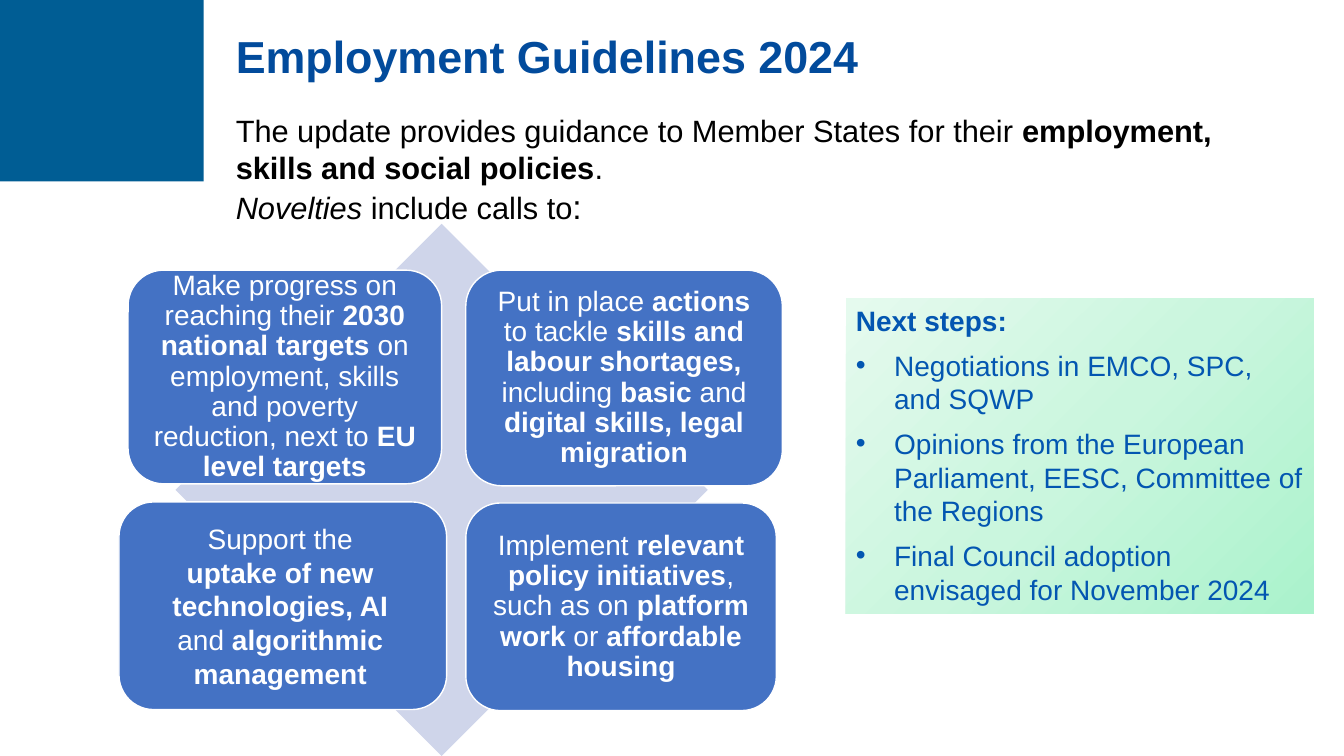
import lxml.etree
import pptx
import pptx.dml.color
import pptx.enum.shapes
import pptx.enum.text
import pptx.oxml
import pptx.util

Inches = pptx.util.Inches
Pt = pptx.util.Pt
SHAPES = pptx.enum.shapes.MSO_SHAPE
ALIGN = pptx.enum.text.PP_ALIGN
ANCHOR = pptx.enum.text.MSO_ANCHOR
DRAWING = "http://schemas.openxmlformats.org/drawingml/2006/main"

# Text between ** marks is bold.
TITLE = "Employment Guidelines 2024"
INTRO = ["The update provides guidance to Member States for their "
         "**employment, skills and social policies**.",
         "Novelties include calls to:"]
# box, insets (left, right), line spacing, text
NOVELTIES = [
    ((1.27, 2.68, 3.11, 2.12), (0.08, 0.08), 0.9,
     "Make progress on reaching their **2030 national targets **on employment, "
     "skills and poverty reduction, next to **EU level targets**"),
    ((4.62, 2.68, 3.14, 2.14), (0.08, 0.08), 0.9,
     "Put in place **actions **to tackle **skills and labour shortages, **"
     "including** basic **and** digital skills, legal migration**"),
    ((1.18, 4.98, 3.25, 2.06), (0.38, 0.43), 1.0,
     "Support the **uptake of new technologies, AI **and** algorithmic management**"),
    ((4.62, 4.99, 3.08, 2.06), (0.08, 0.08), 0.9,
     "Implement **relevant policy initiatives**, such as on **platform work** or "
     "**affordable housing**"),
]
NEXT_STEPS_HEADING = "**Next steps:**"
NEXT_STEPS = ["Negotiations in EMCO, SPC, and SQWP",
              "Opinions from the European Parliament, EESC, Committee of the Regions",
              "Final Council adoption envisaged for November 2024"]
NEXT_STEPS_GRADIENT = [(0, "AAF2CC"), (50, "CAF6DE"), (100, "E5FAEE")]


def rgb(colour):
    return pptx.dml.color.RGBColor.from_string(colour)


def add_shape(slide, kind, box, fill, line=None):
    shape = slide.shapes.add_shape(kind, *map(Inches, box))
    shape.shadow.inherit = False
    shape.fill.solid()
    shape.fill.fore_color.rgb = rgb(fill)
    if line:
        shape.line.color.rgb = rgb(line)
        shape.line.width = Pt(1)
    else:
        shape.line.fill.background()
    return shape


def add_runs(paragraph, marked_text, size, colour):
    """Add runs, alternating regular and bold at each ** mark."""
    for index, part in enumerate(marked_text.split("**")):
        if part:
            run = paragraph.add_run()
            run.text = part
            run.font.name = "Arial"
            run.font.size = Pt(size)
            run.font.bold = index % 2 == 1
            run.font.color.rgb = rgb(colour)


def add_text(slide, box, text, size, colour):
    frame = slide.shapes.add_textbox(*map(Inches, box)).text_frame
    frame.word_wrap = True
    add_runs(frame.paragraphs[0], text, size, colour)
    return frame


def add_novelty(slide, box, insets, spacing, text):
    shape = add_shape(slide, SHAPES.ROUNDED_RECTANGLE, box, "4472C4", "FFFFFF")
    frame = shape.text_frame
    frame.word_wrap = True
    frame.vertical_anchor = ANCHOR.MIDDLE
    frame.margin_left, frame.margin_right = map(Inches, insets)
    frame.margin_top = frame.margin_bottom = Inches(0.08)
    paragraph = frame.paragraphs[0]
    paragraph.alignment = ALIGN.CENTER
    paragraph.line_spacing = spacing
    add_runs(paragraph, text, 20, "FFFFFF")


def set_corner_gradient(shape, stops):
    """Fill with a circular gradient centred on the lower right corner."""
    stop_xml = "".join(f'<a:gs pos="{position * 1000}"><a:srgbClr val="{colour}"/></a:gs>'
                       for position, colour in stops)
    gradient = pptx.oxml.parse_xml(
        f'<a:gradFill xmlns:a="{DRAWING}" rotWithShape="1"><a:gsLst>{stop_xml}</a:gsLst>'
        '<a:path path="circle"><a:fillToRect l="100000" t="100000"/></a:path></a:gradFill>')
    properties = shape._element.spPr
    solid = properties.find(f"{{{DRAWING}}}solidFill")
    properties.replace(solid, gradient)


def add_bullet(paragraph):
    properties = paragraph._p.get_or_add_pPr()
    indent = Inches(0.38)
    properties.set("marL", str(indent))
    properties.set("indent", str(-indent))
    font = lxml.etree.SubElement(properties, f"{{{DRAWING}}}buFont")
    font.set("typeface", "Arial")
    bullet = lxml.etree.SubElement(properties, f"{{{DRAWING}}}buChar")
    bullet.set("char", "•")


def add_next_steps(slide):
    shape = add_shape(slide, SHAPES.RECTANGLE, (8.39, 2.96, 4.64, 3.13),
                      NEXT_STEPS_GRADIENT[0][1])
    set_corner_gradient(shape, NEXT_STEPS_GRADIENT)
    frame = shape.text_frame
    frame.word_wrap = True
    frame.vertical_anchor = ANCHOR.TOP
    heading = frame.paragraphs[0]
    heading.alignment = ALIGN.LEFT
    add_runs(heading, NEXT_STEPS_HEADING, 20, "0356B1")
    for step in NEXT_STEPS:
        paragraph = frame.add_paragraph()
        add_bullet(paragraph)
        paragraph.alignment = ALIGN.LEFT
        paragraph.space_before = Pt(8)
        add_runs(paragraph, step, 20, "0356B1")


def add_intro(slide):
    frame = add_text(slide, (2.24, 1.06, 10.29, 1.25), INTRO[0], 22, "000000")
    lead, rest = INTRO[1].split(" ", 1)
    paragraph = frame.add_paragraph()
    add_runs(paragraph, lead + " ", 22, "000000")
    paragraph.runs[0].font.italic = True
    add_runs(paragraph, rest[:-1], 22, "000000")
    add_runs(paragraph, rest[-1], 24, "000000")


def main():
    presentation = pptx.Presentation()
    presentation.slide_width = Inches(13.33)
    presentation.slide_height = Inches(7.5)
    slide = presentation.slides.add_slide(presentation.slide_layouts[6])

    add_shape(slide, SHAPES.RECTANGLE, (0, 0, 2.02, 1.8), "005D94")
    title = add_text(slide, (2.24, 0.19, 10.9, 0.8), f"**{TITLE}**", 32, "024B9C")
    title.vertical_anchor = ANCHOR.MIDDLE
    title.paragraphs[0].line_spacing = 0.9

    add_shape(slide, SHAPES.DIAMOND, (1.74, 2.22, 5.28, 5.28), "CFD5EA")
    for novelty in NOVELTIES:
        add_novelty(slide, *novelty)
    add_intro(slide)
    add_next_steps(slide)
    presentation.save("out.pptx")


if __name__ == "__main__":
    main()
